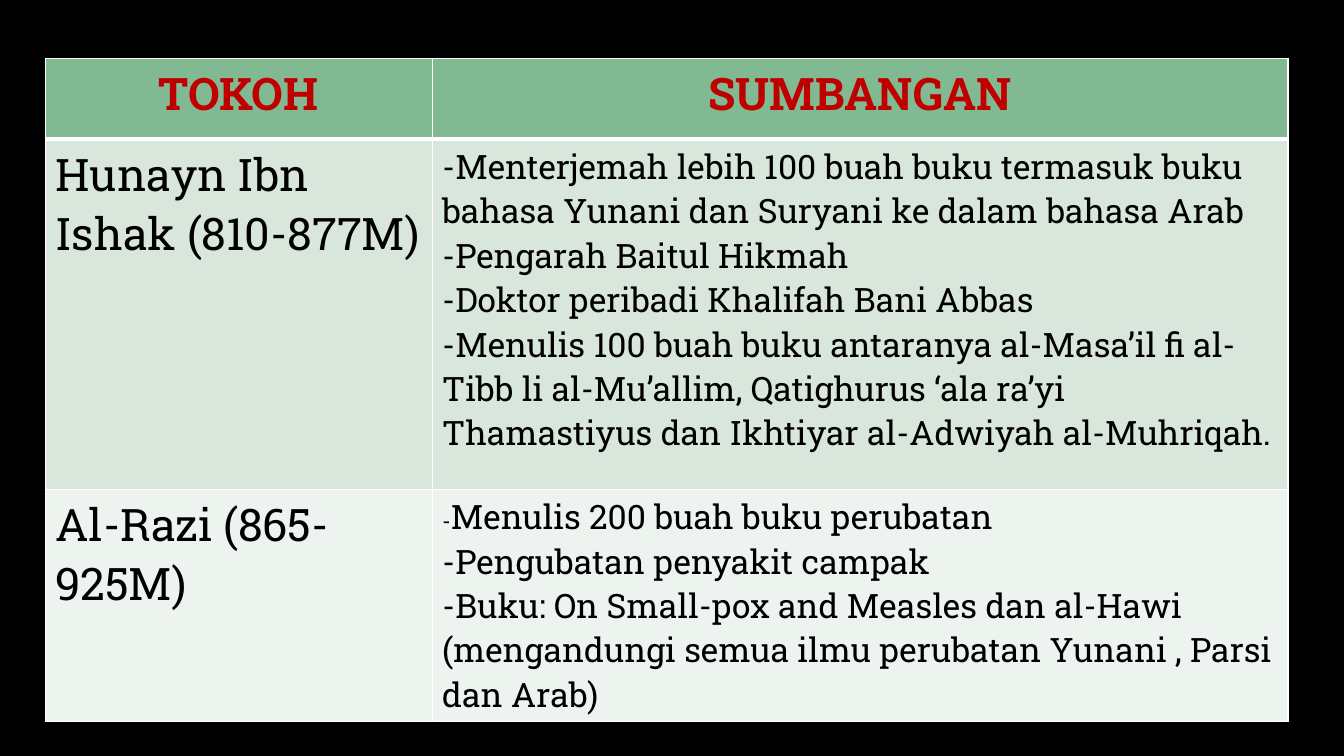
from lxml import etree
from pptx import Presentation
from pptx.dml.color import RGBColor
from pptx.enum.text import PP_ALIGN
from pptx.oxml.ns import qn
from pptx.util import Cm, Pt

CENTER, LEFT = PP_ALIGN.CENTER, PP_ALIGN.LEFT
FONT = "Roboto Slab"
BLACK, WHITE, RED = "000000", "FFFFFF", "C00000"
HEADER_FILL = "81B992"
BODY_FILLS = ["D8E6DC", "EDF3EE"]
NAME_SIZE, WORK_SIZE, SMALL_DASH_SIZE = 32, 24, 16

COLUMN_WIDTHS = [9.75, 21.57]
ROW_HEIGHTS = [2.04, 8.82, 5.85]

HEADINGS = ["TOKOH", "SUMBANGAN"]
# Each contribution is a list of (text, size) runs
SCHOLARS = [
    ("Hunayn Ibn Ishak (810-877M)", [
        [("-Menterjemah lebih 100 buah buku termasuk buku bahasa Yunani "
          "dan Suryani ke dalam bahasa Arab", WORK_SIZE)],
        [("-Pengarah Baitul Hikmah", WORK_SIZE)],
        [("-Doktor peribadi Khalifah Bani Abbas", WORK_SIZE)],
        [("-Menulis 100 buah buku antaranya al-Masa’il fi al-Tibb li "
          "al-Mu’allim, Qatighurus ‘ala ra’yi Thamastiyus dan Ikhtiyar "
          "al-Adwiyah al-Muhriqah.", WORK_SIZE)],
    ]),
    ("Al-Razi (865-925M)", [
        [("-", SMALL_DASH_SIZE), ("Menulis 200 buah buku perubatan", WORK_SIZE)],
        [("-Pengubatan penyakit campak", WORK_SIZE)],
        [("-Buku: On Small-pox and Measles dan al-Hawi (mengandungi semua "
          "ilmu perubatan Yunani , Parsi dan Arab)", WORK_SIZE)],
    ]),
]


def paint(fill, color):
    fill.solid()
    fill.fore_color.rgb = RGBColor.from_string(color)


def set_borders(cell, bottom, top):
    properties = cell._tc.get_or_add_tcPr()
    widths = {"a:lnL": 1, "a:lnR": 1, "a:lnT": top, "a:lnB": bottom}
    for position, (side, width) in enumerate(widths.items()):
        line = etree.Element(qn(side), w=str(Pt(width)))
        solid = etree.SubElement(line, qn("a:solidFill"))
        etree.SubElement(solid, qn("a:srgbClr"), val=WHITE)
        properties.insert(position, line)


def write_cell(cell, paragraphs, fill, color=BLACK, bold=False, align=LEFT,
               bottom=1, top=1):
    paint(cell.fill, fill)
    set_borders(cell, bottom, top)
    frame = cell.text_frame
    for index, runs in enumerate(paragraphs):
        paragraph = frame.add_paragraph() if index else frame.paragraphs[0]
        paragraph.alignment = align
        for text, size in runs:
            run = paragraph.add_run()
            run.text = text
            run.font.name = FONT
            run.font.size = Pt(size)
            run.font.bold = bold
            run.font.color.rgb = RGBColor.from_string(color)


def add_scholar_table(slide):
    table = slide.shapes.add_table(
        len(ROW_HEIGHTS), len(COLUMN_WIDTHS), Cm(1.14), Cm(1.47),
        Cm(sum(COLUMN_WIDTHS)), Cm(sum(ROW_HEIGHTS))).table
    for column, width in zip(table.columns, COLUMN_WIDTHS):
        column.width = Cm(width)
    for row, height in zip(table.rows, ROW_HEIGHTS):
        row.height = Cm(height)

    # Heading row, with a thick rule below
    for column, heading in enumerate(HEADINGS):
        write_cell(table.cell(0, column), [[(heading, NAME_SIZE)]], HEADER_FILL,
                   color=RED, bold=True, align=CENTER, bottom=3)

    # One row per scholar
    for row, ((name, works), fill) in enumerate(zip(SCHOLARS, BODY_FILLS), 1):
        top = 3 if row == 1 else 1
        write_cell(table.cell(row, 0), [[(name, NAME_SIZE)]], fill, top=top)
        write_cell(table.cell(row, 1), works, fill, top=top)


def main():
    deck = Presentation()
    deck.slide_width, deck.slide_height = Cm(33.87), Cm(19.05)
    slide = deck.slides.add_slide(deck.slide_layouts[6])
    paint(slide.background.fill, BLACK)
    add_scholar_table(slide)
    deck.save("out.pptx")


if __name__ == "__main__":
    main()
